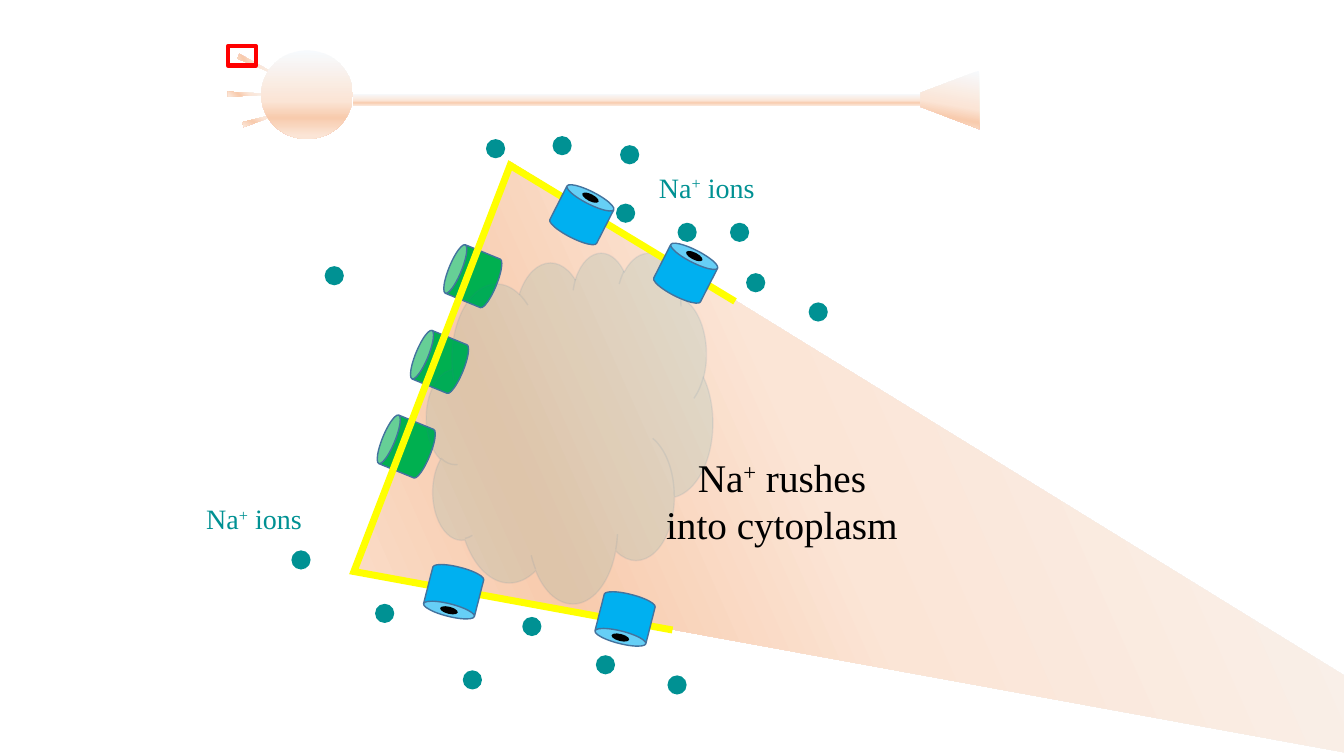
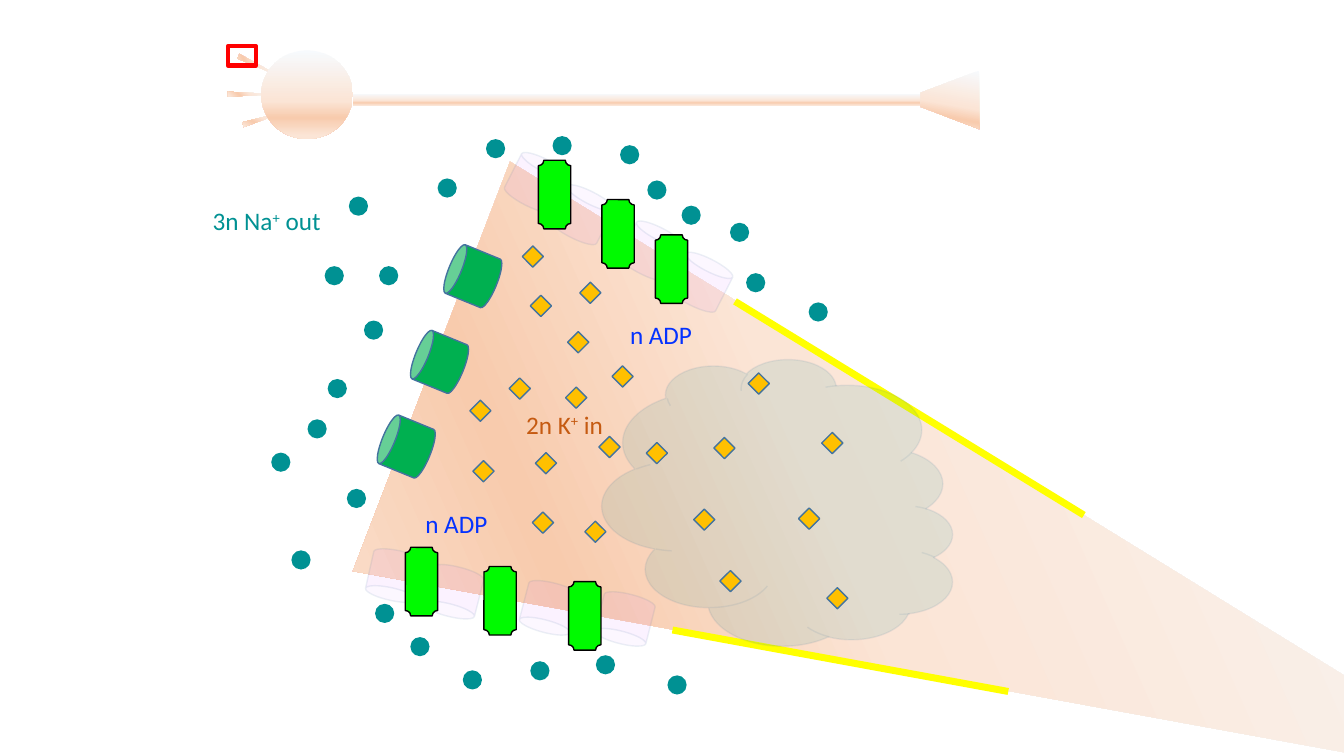
import math
from dataclasses import dataclass

from lxml import etree
from pptx import Presentation
from pptx.dml.color import RGBColor
from pptx.enum import shapes, text
from pptx.oxml import parse_xml
from pptx.oxml.ns import nsdecls, qn
from pptx.shapes.autoshape import Shape
from pptx.slide import Slide
from pptx import util as u

KIND = shapes.MSO_SHAPE
COLORS = {
    "teal": "009193", "green": "00B050", "blue": "00B0F0", "lilac": "D883FF",
    "gold": "FFC000", "lime": "00FA00", "edge": "43739E", "yellow": "FFFF00",
    "red": "FF0000", "black": "000000", "royal": "0432FF", "rust": "C55A11",
}
# Skin gradient of the cell: percent, colour
SKIN = [(0, "F7FAFD"), (57, "FBE5D6"), (76, "F8CBAD"), (96, "FBE5D6")]


@dataclass(frozen=True)
class Look:
    kind: KIND
    width: float
    height: float
    fill: str = ""
    line: str = ""
    weight: float = 1
    alpha: int = 100


@dataclass(frozen=True)
class Piece:
    """A gradient part of the cell."""
    kind: KIND
    box: tuple[float, float, float, float]
    angle: int
    turn: float = 0


@dataclass(frozen=True)
class Spot:
    left: float
    top: float
    turn: float = 0


@dataclass(frozen=True)
class Label:
    box: tuple[float, float, float, float]
    text: str  # ^ switches superscript on and off
    size: int
    color: str
    font: str = "Calibri"
    wrap: bool = False


ION = Look(KIND.OVAL, 0.19, 0.19, "teal")
PUMP = Look(KIND.CAN, 0.52, 0.5, "green", "edge")
GATE = Look(KIND.CAN, 0.52, 0.5, "blue", "edge")
PORE = Look(KIND.OVAL, 0.07, 0.18, "black")
GHOST = Look(KIND.CAN, 0.52, 0.5, "lilac", "edge", alpha=10)
CLOUD = Look(KIND.CLOUD, 2.84, 3.48, "teal", "edge", alpha=10)
GEM = Look(KIND.DIAMOND, 0.21, 0.21, "gold", "edge")
PLAQUE = Look(KIND.PLAQUE, 0.32, 0.68, "lime", "black")
FRAME = Look(KIND.RECTANGLE, 0.28, 0.19, line="red", weight=3)

CELL = [
    Piece(KIND.ISOSCELES_TRIANGLE, (7.51, -0.08, 4.35, 11.58), 45, 111),
    Piece(KIND.ISOSCELES_TRIANGLE, (2.56, 0.42, 0.05, 0.49), 45, 116),
    Piece(KIND.ISOSCELES_TRIANGLE, (2.48, 0.69, 0.05, 0.49), 45, 90),
    Piece(KIND.ISOSCELES_TRIANGLE, (2.62, 0.92, 0.05, 0.49), 45, 73),
    Piece(KIND.OVAL, (2.59, 0.5, 0.91, 0.88), 90),
    Piece(KIND.RECTANGLE, (3.5, 0.93, 5.64, 0.12), 90),
    Piece(KIND.TRAPEZOID, (9.13, 0.7, 0.58, 0.58), 190, 270),
]
PUMPS = [Spot(4.1, 3.34, 292.3), Spot(4.43, 2.49, 292.3), Spot(3.77, 4.18, 292.3)]
GATES = [Spot(5.51, 1.88, 27), Spot(6.54, 2.46, 27),
         Spot(5.94, 5.89, 194.2), Spot(4.24, 5.62, 194.2)]
GHOSTS = [Spot(5.51, 1.88, 27), Spot(6.69, 2.55, 27),
          Spot(5.94, 5.89, 194.2), Spot(4.24, 5.62, 194.2),
          Spot(5.06, 1.56, 27), Spot(6.2, 2.24, 27),
          Spot(3.66, 5.46, 192.6), Spot(5.19, 5.78, 194.6)]

# Ions that stay in place on both slides, then those of one slide
STILL = [(3.22, 2.64), (5.48, 1.35), (3.72, 5.99), (4.82, 1.38),
         (2.89, 5.46), (6.62, 6.7), (4.59, 6.65), (5.91, 6.5),
         (8.02, 3), (6.15, 1.44), (7.24, 2.21), (7.4, 2.71)]
NEAR = [(5.18, 6.12), (6.11, 2.02), (6.72, 2.21)]
OUT = [(3.46, 1.95), (3.76, 2.64), (2.69, 4.49), (3.05, 4.16), (3.61, 3.18),
       (3.44, 4.85), (4.34, 1.77), (3.25, 3.76), (5.26, 6.56), (6.42, 1.79),
       (6.76, 2.04), (4.07, 6.32)]
GEMS = [(6.41, 4.39), (5.8, 5.17), (7.14, 5.66), (7.92, 5.04), (7.08, 4.34),
        (7.42, 3.7), (6.88, 5.05), (8.2, 5.83), (8.15, 4.29), (4.69, 4.57),
        (4.66, 3.97), (5.18, 2.44), (5.28, 5.08), (5.94, 4.33), (5.61, 3.84),
        (5.05, 3.75), (5.63, 3.29), (5.75, 2.8), (5.26, 2.93), (6.07, 3.63),
        (5.31, 4.49)]
PLAQUES = [(5.97, 1.98), (6.5, 2.33), (5.34, 1.59),
           (4.8, 5.62), (4.02, 5.43), (5.64, 5.77)]

# Membrane corners, and the far ends it reaches later
WALL = [(7.29, 2.99), (5.06, 1.64), (3.51, 5.67), (6.67, 6.25)]
TAILS = [(WALL[3], (10, 6.86)), (WALL[0], (10.75, 5.11))]

SERIF = "Times New Roman"
RUSH = [
    Label((6.38, 1.64, 1.26, 0.44), "Na^+^ ions", 20, "teal", SERIF, True),
    Label((1.89, 4.93, 1.26, 0.44), "Na^+^ ions", 20, "teal", SERIF, True),
    Label((6.3, 4.45, 2.91, 1.04), "Na^+^ rushes\ninto cytoplasm", 28, "black",
          SERIF, True),
]
SWAP = [
    Label((6.15, 3.12, 0.82, 0.4), "n ADP", 18, "royal"),
    Label((4.12, 4.99, 0.82, 0.4), "n ADP", 18, "royal"),
    Label((2.01, 1.99, 1.34, 0.4), "3n Na^+^ out", 18, "teal"),
    Label((5.12, 4.01, 0.99, 0.4), "2n K^+^ in", 18, "rust"),
]


def rgb(name: str) -> RGBColor:
    return RGBColor.from_string(COLORS[name])


def inches(*sizes: float) -> list[int]:
    return [u.Inches(size) for size in sizes]


def stamp(slide: Slide, look: Look, spot: Spot) -> Shape:
    """Draw one shape of a given look."""
    shape = slide.shapes.add_shape(
        look.kind, *inches(spot.left, spot.top, look.width, look.height))
    shape.rotation = spot.turn
    shape.shadow.inherit = False
    if look.fill:
        shape.fill.solid()
        shape.fill.fore_color.rgb = rgb(look.fill)
    else:
        shape.fill.background()
    if look.line:
        shape.line.color.rgb = rgb(look.line)
        shape.line.width = u.Pt(look.weight)
    else:
        shape.line.fill.background()
    if look.alpha < 100:
        for color in shape._element.spPr.iter(qn("a:srgbClr")):
            etree.SubElement(color, qn("a:alpha")).set("val", str(look.alpha * 1000))
    return shape


def scatter(slide: Slide, look: Look, points: list[tuple[float, float]]) -> None:
    for left, top in points:
        stamp(slide, look, Spot(left, top))


def skin(slide: Slide, piece: Piece) -> None:
    """Draw one gradient part of the cell."""
    shape = slide.shapes.add_shape(piece.kind, *inches(*piece.box))
    shape.rotation = piece.turn
    shape.shadow.inherit = False
    shape.line.fill.background()
    if piece.kind == KIND.TRAPEZOID:
        shape.adjustments[0] = 0.38
    stops = "".join(f'<a:gs pos="{pos * 1000}"><a:srgbClr val="{color}"/></a:gs>'
                    for pos, color in SKIN)
    grad = parse_xml(
        f'<a:gradFill {nsdecls("a")} rotWithShape="1"><a:gsLst>{stops}</a:gsLst>'
        f'<a:lin ang="{piece.angle * 60000}" scaled="0"/></a:gradFill>')
    shape._element.spPr.find(qn("a:prstGeom")).addnext(grad)


def gate(slide: Slide, spot: Spot) -> None:
    """Draw a channel with its pore on the lid."""
    stamp(slide, GATE, spot)
    angle, reach = math.radians(spot.turn), 0.19
    left = spot.left + (GATE.width - PORE.width) / 2 + reach * math.sin(angle)
    top = spot.top + (GATE.height - PORE.height) / 2 - reach * math.cos(angle)
    stamp(slide, PORE, Spot(left, top, (spot.turn + 90) % 360))


def wall(slide: Slide) -> None:
    """Draw the open membrane outline."""
    start, *rest = [tuple(inches(*point)) for point in WALL]
    pen = slide.shapes.build_freeform(*start)
    pen.add_line_segments(rest, close=False)
    shape = pen.convert_to_shape()
    shape.shadow.inherit = False
    shape.fill.background()
    shape.line.color.rgb = rgb("yellow")
    shape.line.width = u.Pt(5)
    etree.SubElement(shape.line._get_or_add_ln(), qn("a:miter")).set("lim", "800000")


def tail(slide: Slide, start: tuple[float, float], end: tuple[float, float]) -> None:
    line = slide.shapes.add_connector(
        shapes.MSO_CONNECTOR.STRAIGHT, *inches(*start, *end))
    line.line.color.rgb = rgb("yellow")
    line.line.width = u.Pt(5)
    etree.SubElement(line._element.spPr, qn("a:effectLst"))


def write(slide: Slide, label: Label) -> None:
    frame = slide.shapes.add_textbox(*inches(*label.box)).text_frame
    frame.word_wrap = label.wrap
    frame.auto_size = text.MSO_AUTO_SIZE.SHAPE_TO_FIT_TEXT
    for row, words in enumerate(label.text.split("\n")):
        para = frame.add_paragraph() if row else frame.paragraphs[0]
        para.alignment = text.PP_ALIGN.CENTER if label.wrap else text.PP_ALIGN.LEFT
        first, *rest = words.split("^")
        para.text = first
        for part in rest:
            para.add_run().text = part
        for spot, run in enumerate(para.runs):
            run.font.name = label.font
            run.font.size = u.Pt(label.size)
            run.font.color.rgb = rgb(label.color)
            if spot % 2:
                run._r.get_or_add_rPr().set("baseline", "30000")


def base(deck: Presentation) -> Slide:
    """Add a slide with the cell and the framed dendrite."""
    slide = deck.slides.add_slide(deck.slide_layouts[6])
    for piece in CELL:
        skin(slide, piece)
    stamp(slide, FRAME, Spot(2.26, 0.46))
    return slide


def main() -> None:
    deck = Presentation()
    deck.slide_width, deck.slide_height = inches(13.33, 7.5)

    # Slide 1: sodium flows in
    slide = base(deck)
    scatter(slide, ION, STILL + NEAR)
    for spot in PUMPS:
        stamp(slide, PUMP, spot)
    stamp(slide, CLOUD, Spot(4.23, 2.5))
    wall(slide)
    for spot in GATES:
        gate(slide, spot)
    for label in RUSH:
        write(slide, label)

    # Slide 2: pumps restore the balance
    slide = base(deck)
    for spot in PUMPS:
        stamp(slide, PUMP, spot)
    for start, end in TAILS:
        tail(slide, start, end)
    for spot in GHOSTS:
        stamp(slide, GHOST, spot)
    stamp(slide, CLOUD, Spot(6.3, 3.25, 90))
    scatter(slide, GEM, GEMS)
    scatter(slide, PLAQUE, PLAQUES)
    scatter(slide, ION, STILL + OUT)
    for label in SWAP:
        write(slide, label)

    deck.save("out.pptx")


if __name__ == "__main__":
    main()
